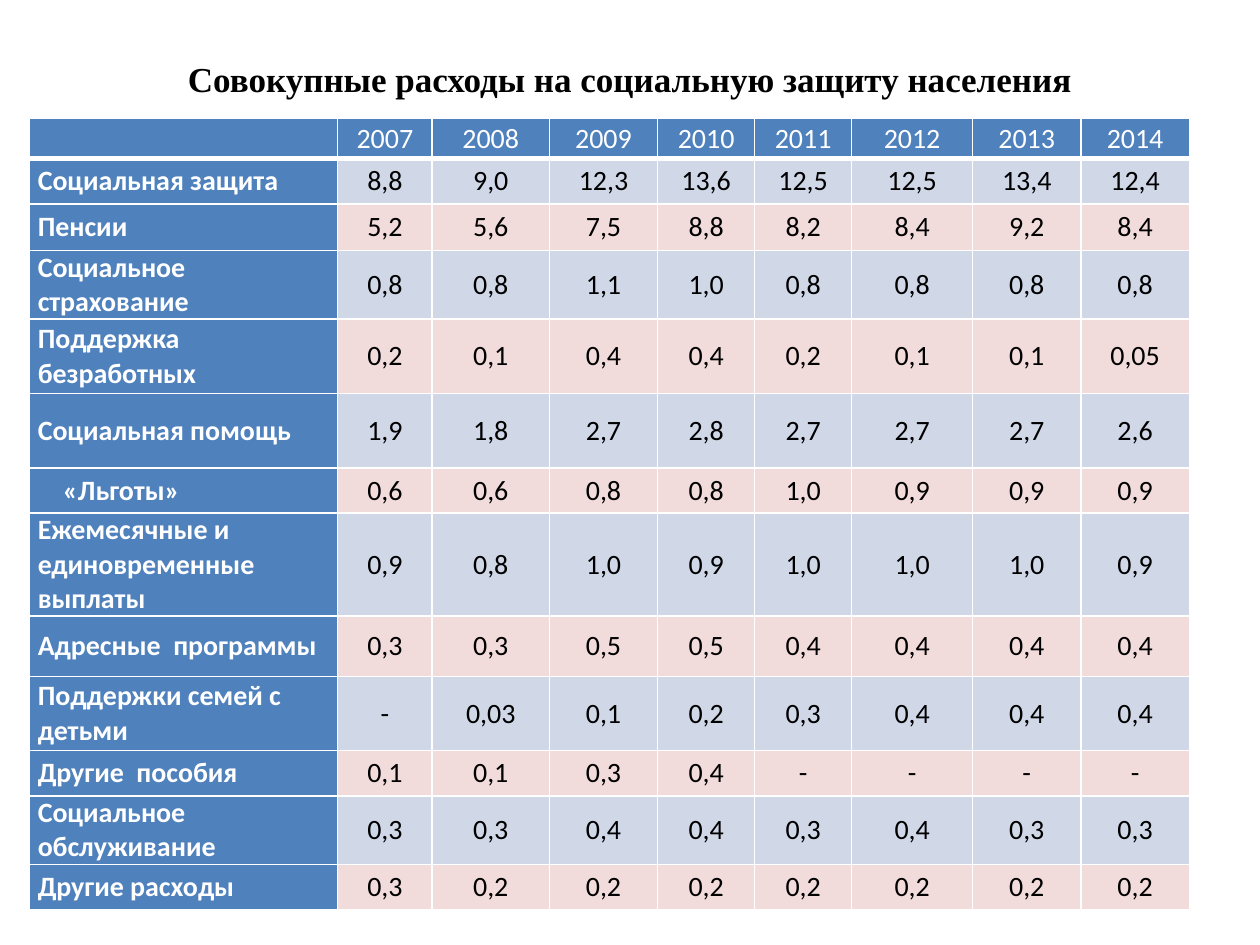
from lxml.etree import SubElement
from pptx import Presentation
from pptx.dml.color import RGBColor
from pptx.enum.text import MSO_ANCHOR, PP_ALIGN
from pptx.oxml.ns import qn
from pptx.util import Inches, Pt

WHITE = RGBColor(0xFF, 0xFF, 0xFF)
BLACK = RGBColor(0, 0, 0)
BLUE = RGBColor(0x4F, 0x81, 0xBD)
PALE_BLUE = RGBColor(0xD0, 0xD8, 0xE8)
PALE_RED = RGBColor(0xF2, 0xDC, 0xDB)

TITLE = "Совокупные расходы на социальную защиту населения"
SUBITEM = "«Льготы»"
SPENDING = [
    ["", *(str(year) for year in range(2007, 2015))],
    ["Социальная защита", "8,8", "9,0", "12,3", "13,6", "12,5", "12,5", "13,4", "12,4"],
    ["Пенсии", "5,2", "5,6", "7,5", "8,8", "8,2", "8,4", "9,2", "8,4"],
    ["Социальное страхование", "0,8", "0,8", "1,1", "1,0", "0,8", "0,8", "0,8", "0,8"],
    ["Поддержка безработных", "0,2", "0,1", "0,4", "0,4", "0,2", "0,1", "0,1", "0,05"],
    ["Социальная помощь", "1,9", "1,8", "2,7", "2,8", "2,7", "2,7", "2,7", "2,6"],
    [SUBITEM, "0,6", "0,6", "0,8", "0,8", "1,0", "0,9", "0,9", "0,9"],
    ["Ежемесячные и единовременные выплаты",
     "0,9", "0,8", "1,0", "0,9", "1,0", "1,0", "1,0", "0,9"],
    ["Адресные  программы", "0,3", "0,3", "0,5", "0,5", "0,4", "0,4", "0,4", "0,4"],
    ["Поддержки семей с детьми", "-", "0,03", "0,1", "0,2", "0,3", "0,4", "0,4", "0,4"],
    ["Другие  пособия", "0,1", "0,1", "0,3", "0,4", "-", "-", "-", "-"],
    ["Социальное обслуживание", "0,3", "0,3", "0,4", "0,4", "0,3", "0,4", "0,3", "0,3"],
    ["Другие расходы", "0,3", "0,2", "0,2", "0,2", "0,2", "0,2", "0,2", "0,2"],
]
COL_WIDTHS = [2.45, 0.75, 0.93, 0.86, 0.77, 0.77, 0.96, 0.86, 0.86]
ROW_HEIGHTS = [0.32, 0.36, 0.37, 0.52, 0.59, 0.59, 0.36, 0.77, 0.48, 0.59, 0.36, 0.52, 0.36]


def add_run(p, text, font, size, color, bold):
    """Append one formatted run to a paragraph."""
    r = p.add_run()
    r.text = text
    r.font.name = font
    r.font.size = Pt(size)
    r.font.color.rgb = color
    r.font.bold = bold


def add_title(s, left, top, width, height):
    """Place the centred slide title in the given box."""
    tf = s.shapes.add_textbox(left, top, width, height).text_frame
    tf.word_wrap = True
    tf.vertical_anchor = MSO_ANCHOR.MIDDLE
    p = tf.paragraphs[0]
    p.alignment = PP_ALIGN.CENTER
    add_run(p, TITLE, "Times New Roman", 20, BLACK, True)


def set_borders(cell, widths):
    """Draw white borders of the given point widths by side."""
    tc_pr = cell._tc.get_or_add_tcPr()
    for side, width in widths.items():
        ln = SubElement(tc_pr, qn(f"a:ln{side}"), w=str(Pt(width)))
        fill = SubElement(ln, qn("a:solidFill"))
        SubElement(fill, qn("a:srgbClr"), val=str(WHITE))


def fill_cell(cell, text, row, col):
    """Format one table cell by its row and column."""
    header, label = row == 0, col == 0
    cell.margin_left = cell.margin_right = Inches(0.07)
    cell.margin_top = cell.margin_bottom = 0
    cell.vertical_anchor = MSO_ANCHOR.MIDDLE
    set_borders(cell, {"L": 1, "R": 1, "T": 3 if row == 1 else 1, "B": 3 if header else 1})
    cell.fill.solid()
    band = PALE_BLUE if row % 2 else PALE_RED
    cell.fill.fore_color.rgb = BLUE if header or label else band
    if not text:
        return
    p = cell.text_frame.paragraphs[0]
    p.alignment = PP_ALIGN.LEFT if label else PP_ALIGN.CENTER
    if text == SUBITEM:
        p._p.get_or_add_pPr().set("marL", str(Inches(0.2)))
    add_run(p, text, "Calibri", 16, WHITE if header or label else BLACK, label)


def add_spending_table(s, left, top, width, height):
    """Place the spending table in the given box."""
    table = s.shapes.add_table(len(SPENDING), len(COL_WIDTHS), left, top, width, height).table
    for column, size in zip(table.columns, COL_WIDTHS):
        column.width = Inches(size)
    for row, size in zip(table.rows, ROW_HEIGHTS):
        row.height = Inches(size)
    for i, values in enumerate(SPENDING):
        for j, text in enumerate(values):
            fill_cell(table.cell(i, j), text, i, j)


def main():
    """Build and save the slide."""
    prs = Presentation()
    prs.slide_width, prs.slide_height = Inches(10), Inches(7.5)
    s = prs.slides.add_slide(prs.slide_layouts[6])
    add_spending_table(s, Inches(0.23), Inches(0.94), Inches(9.22), Inches(6.23))
    add_title(s, Inches(0.5), Inches(0.3), Inches(9), Inches(0.64))
    prs.save("out.pptx")


if __name__ == "__main__":
    main()
